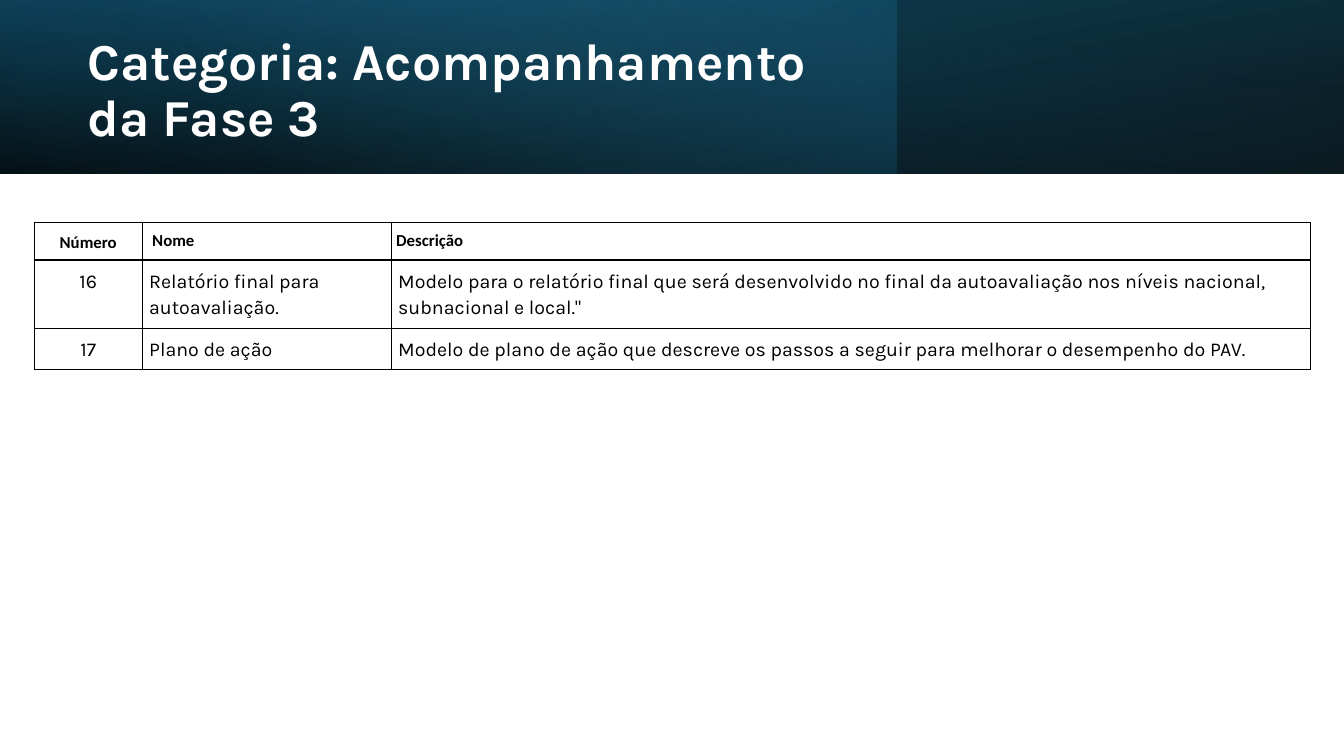
"""Build the slide listing the Phase 3 follow-up templates."""
from typing import NamedTuple

from lxml.etree import SubElement
from pptx import Presentation
from pptx.dml.color import RGBColor
from pptx.enum.shapes import MSO_SHAPE as Shape
from pptx.enum.text import MSO_ANCHOR as Anchor, PP_ALIGN as Align
from pptx.oxml.ns import qn
from pptx.util import Inches, Pt

WIDTH, HEIGHT = Inches(13.33), Inches(7.5)
BLACK = RGBColor(0x00, 0x00, 0x00)
WHITE = RGBColor(0xFF, 0xFF, 0xFF)
NAVY = RGBColor(0x10, 0x48, 0x62)
TEAL = RGBColor(0x15, 0x60, 0x82)
SKY = RGBColor(0x46, 0xB1, 0xE1)
BANNER_HEIGHT = 22.93


class Stop(NamedTuple):
    position: int
    color: RGBColor
    opacity: int


class Layer(NamedTuple):
    width: float
    angle: int
    stops: tuple[Stop, ...]
    rotation: int = 0
    flipped: bool = False


class Style(NamedTuple):
    font: str
    size: int
    bold: bool
    color: RGBColor = BLACK
    spacing: float = 1.15


class Column(NamedTuple):
    width: float
    align: Align
    header_margins: tuple[float, float]
    texts: tuple[str, ...]


LAYERS = (
    Layer(100, 100, (Stop(0, BLACK, 96), Stop(100, NAVY, 100)), 180, True),
    Layer(66.67, 140, (Stop(0, TEAL, 41), Stop(74, SKY, 0))),
    Layer(100, 260, (Stop(0, BLACK, 63), Stop(78, TEAL, 15)), flipped=True),
)
TITLE = Style("Karla", 37, True, WHITE, 0.9)
HEADER = Style("Calibri", 12, True)
BODY = Style("Karla", 14, False)
BODY_MARGINS = (0.07, 0.07)
ROW_HEIGHT = 4.13
COLUMNS = (
    Column(8.03, Align.CENTER, (0.07, 0.07), ("Número", "16", "17")),
    Column(18.53, Align.LEFT, (0.1, 0.05),
           ("Nome", "Relatório final para autoavaliação.", "Plano de ação")),
    Column(68.42, Align.LEFT, (0.05, 0.05), (
        "Descrição",
        "Modelo para o relatório final que será desenvolvido no final da "
        "autoavaliação nos níveis nacional, subnacional e local.\"",
        "Modelo de plano de ação que descreve os passos a seguir para "
        "melhorar o desempenho do PAV.")),
)


def across(share: float) -> int:
    """Turn a percentage of the slide's width into a length."""
    return round(WIDTH * share / 100)


def down(share: float) -> int:
    """Turn a percentage of the slide's height into a length."""
    return round(HEIGHT * share / 100)


def add_layer(slide, layer: Layer) -> None:
    """Draw one translucent gradient of the banner."""
    sp = slide.shapes.add_shape(Shape.RECTANGLE, 0, 0, across(layer.width), down(BANNER_HEIGHT))
    sp.shadow.inherit = False
    sp.line.fill.background()
    sp.rotation = layer.rotation
    if layer.flipped:
        sp._element.spPr.find(qn("a:xfrm")).set("flipH", "1")
    sp.fill.gradient()
    grad = sp._element.spPr.find(qn("a:gradFill"))
    for child in list(grad):
        grad.remove(child)
    stops = SubElement(grad, qn("a:gsLst"))
    for stop in layer.stops:
        gs = SubElement(stops, qn("a:gs"), pos=str(stop.position * 1000))
        color = SubElement(gs, qn("a:srgbClr"), val=str(stop.color))
        SubElement(color, qn("a:alpha"), val=str(stop.opacity * 1000))
    SubElement(grad, qn("a:lin"), ang=str(layer.angle * 60000), scaled="0")


def write(tf, text: str, style: Style, align: Align = Align.LEFT) -> None:
    """Fill a text frame with one styled paragraph."""
    tf.text = text
    p = tf.paragraphs[0]
    p.alignment = align
    p.line_spacing = style.spacing
    font = p.runs[0].font
    font.name, font.size, font.bold = style.font, Pt(style.size), style.bold
    font.color.rgb = style.color


def add_title(slide, text: str) -> None:
    """Place the title on the banner."""
    sp = slide.shapes.add_textbox(across(5.78), down(3.6), across(57.91), down(16.93))
    tf = sp.text_frame
    tf.word_wrap = True
    tf.vertical_anchor = Anchor.MIDDLE
    write(tf, text, TITLE)


def frame_cell(cell, margins: tuple[float, float]) -> None:
    """Set a cell's margins, borders and fill."""
    cell.margin_left = cell.margin_right = Inches(margins[0])
    cell.margin_top = cell.margin_bottom = Inches(margins[1])
    tc_pr = cell._tc.get_or_add_tcPr()
    for side in ("lnL", "lnR", "lnT", "lnB"):
        line = SubElement(tc_pr, qn(f"a:{side}"), w=str(Pt(1)))
        fill = SubElement(line, qn("a:solidFill"))
        SubElement(fill, qn("a:srgbClr"), val=str(BLACK))
    cell.fill.solid()
    cell.fill.fore_color.rgb = WHITE


def add_templates_table(slide) -> None:
    """Draw the table of templates column by column."""
    rows = len(COLUMNS[0].texts)
    table = slide.shapes.add_table(
        rows, len(COLUMNS), across(2.55), down(29.47),
        across(sum(c.width for c in COLUMNS)), down(ROW_HEIGHT * rows)).table
    table.first_row = table.horz_banding = False
    for x, column in enumerate(COLUMNS):
        table.columns[x].width = across(column.width)
        for y, text in enumerate(column.texts):
            cell = table.cell(y, x)
            frame_cell(cell, BODY_MARGINS if y else column.header_margins)
            write(cell.text_frame, text, BODY if y else HEADER, column.align)


def main() -> None:
    """Build and save the presentation."""
    prs = Presentation()
    prs.slide_width, prs.slide_height = WIDTH, HEIGHT
    slide = prs.slides.add_slide(prs.slide_layouts[6])
    for layer in LAYERS:
        add_layer(slide, layer)
    add_title(slide, "Categoria: Acompanhamento da Fase 3")
    add_templates_table(slide)
    prs.save("out.pptx")


if __name__ == "__main__":
    main()
